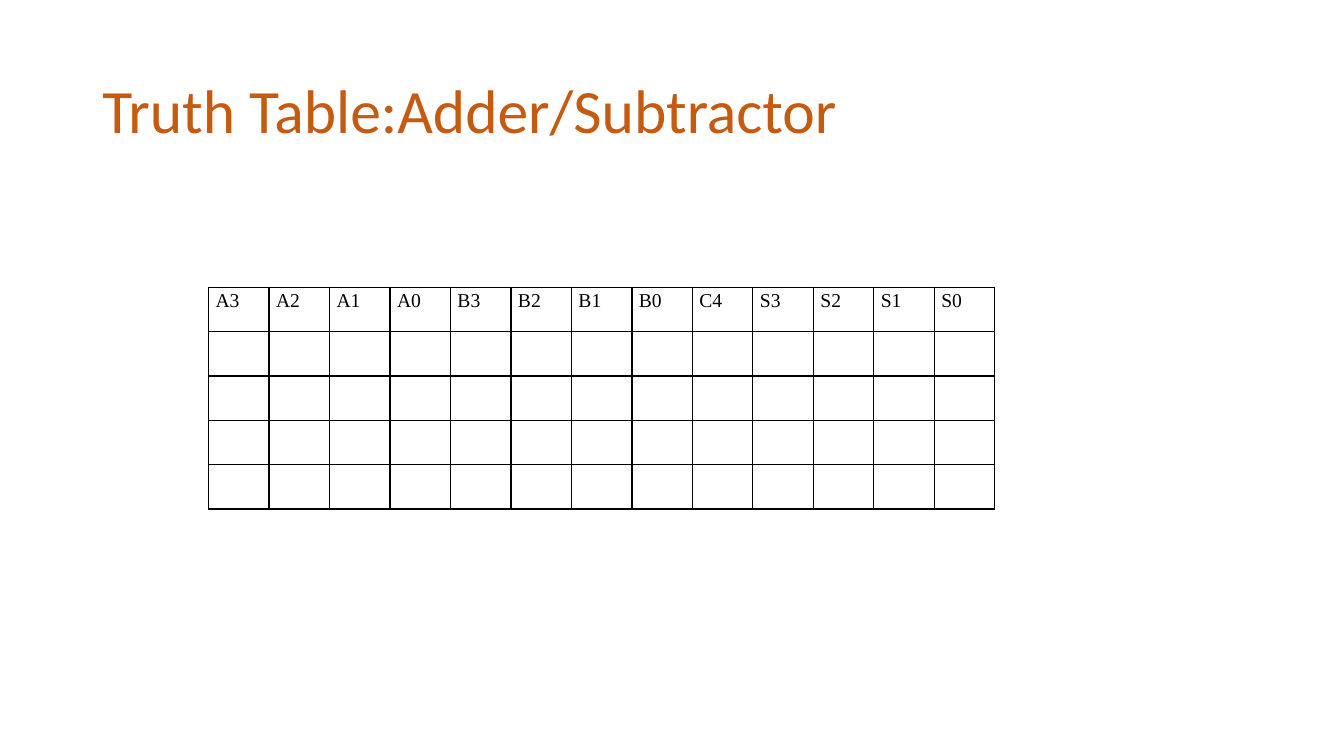
from lxml import etree
from pptx import Presentation
from pptx.dml.color import RGBColor
from pptx.enum.text import MSO_ANCHOR
from pptx.oxml.ns import qn
from pptx.util import Pt

MIDDLE = MSO_ANCHOR.MIDDLE
ORANGE = RGBColor(0xC5, 0x5A, 0x11)
BLACK = RGBColor(0, 0, 0)

SIGNALS = ["A3", "A2", "A1", "A0", "B3", "B2", "B1", "B0",
           "C4", "S3", "S2", "S1", "S0"]
ROW_COUNT = 5


def format_line(para, font_name, size, color, spacing):
    para.line_spacing = spacing
    for span in para.runs:
        span.font.name = font_name
        span.font.size = Pt(size)
        span.font.color.rgb = color


def add_title(page, left, top, width, height):
    box = page.shapes.add_textbox(Pt(left), Pt(top), Pt(width), Pt(height))
    frame = box.text_frame
    frame.word_wrap = True
    frame.vertical_anchor = MIDDLE
    frame.text = "Truth Table:Adder/Subtractor"
    format_line(frame.paragraphs[0], "Calibri", 44, ORANGE, 0.9)


def add_borders(cell, color, width):
    properties = cell._tc.get_or_add_tcPr()
    for position, side in enumerate(("a:lnL", "a:lnR", "a:lnT", "a:lnB")):
        line = etree.Element(qn(side), w=str(Pt(width)))
        fill = etree.SubElement(line, qn("a:solidFill"))
        etree.SubElement(fill, qn("a:srgbClr"), val=str(color))
        properties.insert(position, line)


def add_truth_table(page, left, top, width, height):
    table = page.shapes.add_table(ROW_COUNT, len(SIGNALS), Pt(left), Pt(top),
                                  Pt(width), Pt(height)).table
    table.first_row = False
    table.horz_banding = False
    for column in table.columns:
        column.width = Pt(width / len(SIGNALS))
    for row in table.rows:
        row.height = Pt(height / ROW_COUNT)
    for cell in table.iter_cells():
        cell.fill.background()
        cell.margin_left = cell.margin_right = Pt(5)
        cell.margin_top = cell.margin_bottom = 0
        add_borders(cell, BLACK, 1)
    for column, signal in enumerate(SIGNALS):
        frame = table.cell(0, column).text_frame
        frame.text = signal
        format_line(frame.paragraphs[0], "Times New Roman", 14, BLACK, 1.15)


def main():
    deck = Presentation()
    deck.slide_width = Pt(960)
    deck.slide_height = Pt(540)
    page = deck.slides.add_slide(deck.slide_layouts[6])
    add_title(page, 66, 28.75, 828, 104.4)
    add_truth_table(page, 149, 205.2, 561.6, 158.4)
    deck.save("out.pptx")


if __name__ == "__main__":
    main()
